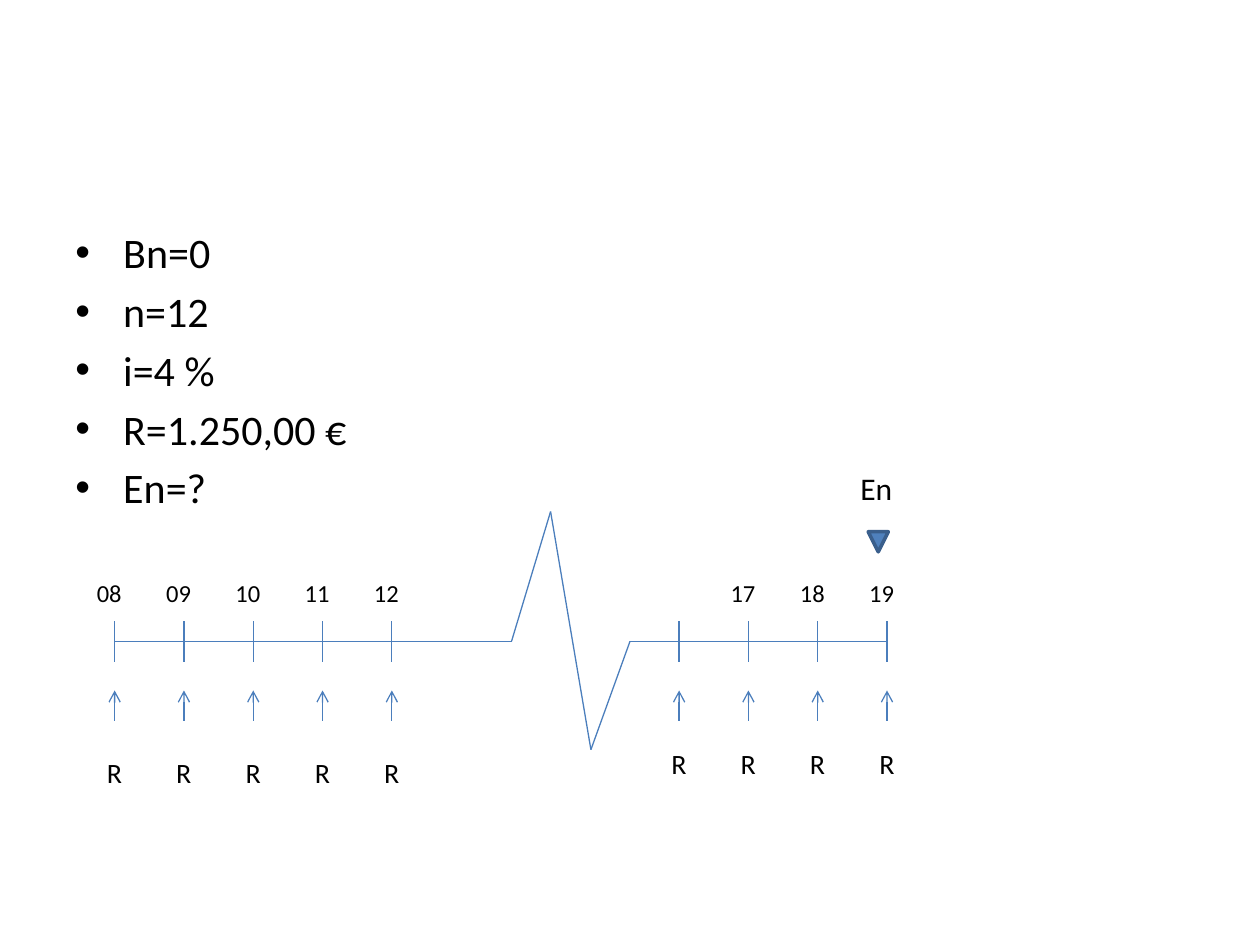
from itertools import pairwise

from lxml import etree
from pptx import Presentation
from pptx.dml.color import RGBColor
from pptx.enum.shapes import MSO_CONNECTOR, MSO_SHAPE
from pptx.oxml.ns import qn
from pptx.util import Inches, Pt

LINE = MSO_CONNECTOR.STRAIGHT
TRIANGLE = MSO_SHAPE.ISOSCELES_TRIANGLE
FONT = "Calibri"
BLACK = "000000"
BLUE = "4B7EBC"
STEP = 0.55
FACTS = ["Bn=0", "n=12", "i=4 %", "R=1.250,00 €", "En=?"]
SPANS = [
    (0, ["08", "09", "10", "11", "12"], 1.89),
    (4.48, ["", "17", "18", "19"], 1.82),
]
AXIS = [(0, 1.03), (3.15, 1.03), (3.46, 0), (3.78, 1.89), (4.09, 1.03), (6.14, 1.03)]


def color(code):
    return RGBColor.from_string(code)


def add_run(para, text, size):
    run = para.add_run()
    run.text = text
    run.font.name = FONT
    run.font.size = Pt(size)
    run.font.color.rgb = color(BLACK)


def add_box(slide, left, top, width, height):
    box = slide.shapes.add_textbox(
        Inches(left), Inches(top), Inches(width), Inches(height)
    )
    box.text_frame.word_wrap = True
    return box.text_frame


def add_label(slide, text, left, top, width, height, size):
    frame = add_box(slide, left, top, width, height)
    add_run(frame.paragraphs[0], text, size)


def add_line(slide, start, end, arrow=False):
    ends = [Inches(n) for n in (*start, *end)]
    line = slide.shapes.add_connector(LINE, *ends)
    line.line.color.rgb = color(BLUE)
    line.line.width = Pt(0.75)
    if arrow:
        etree.SubElement(line.line._get_or_add_ln(), qn("a:tailEnd"), type="arrow")
    etree.SubElement(line._element.spPr, qn("a:effectLst"))


def add_bullet(para):
    props = para._p.get_or_add_pPr()
    props.set("marL", str(Inches(0.38)))
    props.set("indent", str(Inches(-0.38)))
    space = etree.SubElement(props, qn("a:spcBef"))
    etree.SubElement(space, qn("a:spcPct"), val="20000")
    etree.SubElement(props, qn("a:buFont"), typeface="Arial")
    etree.SubElement(props, qn("a:buChar"), char="•")


def add_facts(slide, left, top, width, height):
    frame = add_box(slide, left, top, width, height)
    for i, fact in enumerate(FACTS):
        para = frame.add_paragraph() if i else frame.paragraphs[0]
        add_bullet(para)
        add_run(para, fact, 24)


def add_axis(slide, left, top):
    points = [(left + x, top + y) for x, y in AXIS]
    for start, end in pairwise(points):
        add_line(slide, start, end)
    for shift, years, base in SPANS:
        for i, year in enumerate(years):
            x = left + shift + i * STEP
            add_line(slide, (x, top + 0.87), (x, top + 1.19))
            add_line(slide, (x, top + 1.66), (x, top + 1.42), True)
            if year:
                add_label(slide, year, x - 0.24, top + 0.48, 0.47, 0.34, 14)
            add_label(slide, "R", x - 0.16, top + base, 0.31, 0.37, 16)


def add_marker(slide, left, top):
    add_label(slide, "En", left, top, 0.47, 0.4, 18)
    mark = slide.shapes.add_shape(
        TRIANGLE, Inches(left + 0.16), Inches(top + 0.55), Inches(0.16), Inches(0.16)
    )
    mark.rotation = 180
    mark.shadow.inherit = False
    mark.fill.solid()
    mark.fill.fore_color.rgb = color("4F81BD")
    mark.line.color.rgb = color("3A5F8C")
    mark.line.width = Pt(2)


def main():
    deck = Presentation()
    deck.slide_width = Inches(10)
    deck.slide_height = Inches(7.5)
    slide = deck.slides.add_slide(deck.slide_layouts[6])
    add_facts(slide, 0.5, 1.75, 9, 4.95)
    add_axis(slide, 0.91, 4.06)
    add_marker(slide, 6.73, 3.67)
    deck.save("out.pptx")


if __name__ == "__main__":
    main()
